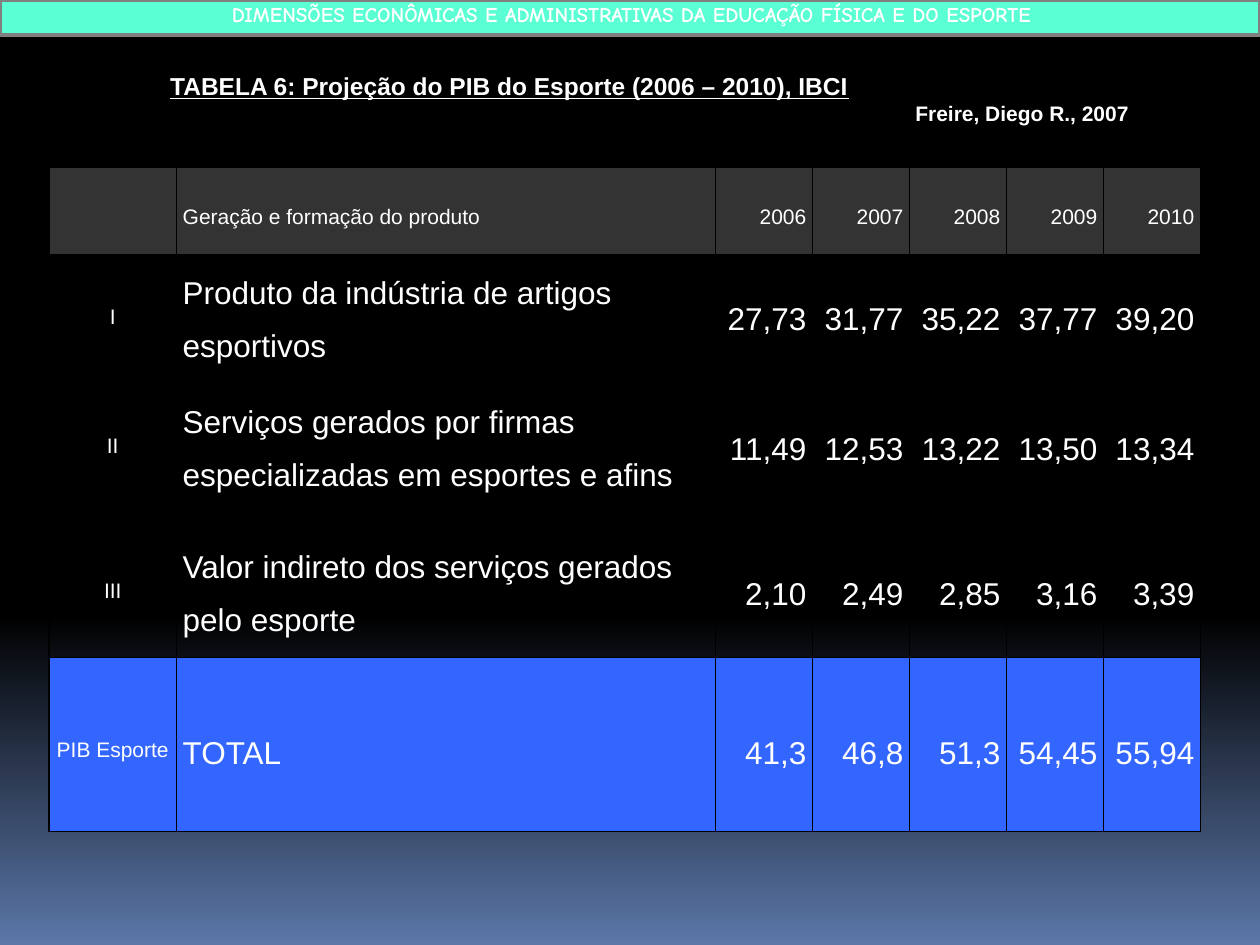
from copy import deepcopy

from lxml import etree
from pptx import Presentation
from pptx.dml.color import RGBColor
from pptx.enum.shapes import MSO_SHAPE
from pptx.enum.text import MSO_ANCHOR, MSO_AUTO_SIZE, PP_ALIGN
from pptx.oxml.ns import qn
from pptx.util import Inches, Pt

LEFT, CENTER, RIGHT, JUSTIFY = PP_ALIGN.LEFT, PP_ALIGN.CENTER, PP_ALIGN.RIGHT, PP_ALIGN.JUSTIFY
MIDDLE = MSO_ANCHOR.MIDDLE
GROW = MSO_AUTO_SIZE.SHAPE_TO_FIT_TEXT
RECTANGLE = MSO_SHAPE.RECTANGLE

WHITE = RGBColor(0xFF, 0xFF, 0xFF)
BLACK = RGBColor(0x00, 0x00, 0x00)
STEEL = RGBColor(0x5B, 0x77, 0xA8)
CHARCOAL = RGBColor(0x33, 0x33, 0x33)
BLUE = RGBColor(0x33, 0x66, 0xFF)
MINT = RGBColor(0x5B, 0xFF, 0xD4)
GRAY = RGBColor(0x80, 0x80, 0x80)

BACKGROUND_STOPS = [(0, BLACK), (0.65, BLACK), (1, STEEL)]
COLUMN_WIDTHS = [1.01, 4.28] + [0.77] * 5
ROW_HEIGHTS = [0.69, 0.69, 1.15, 1.15, 1.38]
ROW_FILLS = {0: CHARCOAL, 4: BLUE}
ROWS = [
    ["", "Geração e formação do produto", "2006", "2007", "2008", "2009", "2010"],
    ["I", "Produto da indústria de artigos esportivos",
     "27,73", "31,77", "35,22", "37,77", "39,20"],
    ["II", "Serviços gerados por firmas especializadas em esportes e afins",
     "11,49", "12,53", "13,22", "13,50", "13,34"],
    ["III", "Valor indireto dos serviços gerados pelo esporte",
     "2,10", "2,49", "2,85", "3,16", "3,39"],
    ["PIB Esporte", "TOTAL", "41,3", "46,8", "51,3", "54,45", "55,94"],
]


class SlideBuilder:
    body_font = "Arial"
    header_font = "Comic Neue"

    def __init__(self, deck):
        self.page = deck.slides.add_slide(deck.slide_layouts[5])

    def background(self, stops):
        fill = self.page.background.fill
        fill.gradient()
        fill.gradient_angle = 270
        stop_list = self.page.element.find(".//" + qn("a:gsLst"))
        stop_list.append(deepcopy(stop_list[-1]))
        for stop, (position, color) in zip(fill.gradient_stops, stops):
            stop.position = position
            stop.color.rgb = color

    def span(self, para, text, size, align, font=body_font, bold=False, underline=False):
        para.alignment = align
        span = para.add_run()
        span.text = text
        span.font.name = font
        span.font.size = Pt(size)
        span.font.bold = bold
        span.font.underline = underline
        span.font.color.rgb = WHITE

    def title(self, caption, author):
        box = self.page.shapes.title
        box.left, box.top = Inches(1.25), Inches(0.51)
        box.width, box.height = Inches(7.81), Inches(0.54)
        frame = box.text_frame
        frame.word_wrap = True
        frame.auto_size = GROW
        frame.vertical_anchor = MIDDLE
        self.span(frame.paragraphs[0], caption, 14, JUSTIFY, bold=True, underline=True)
        self.span(frame.add_paragraph(), author, 12, RIGHT, bold=True)

    def border(self, cell):
        properties = cell._tc.get_or_add_tcPr()
        for side in ("a:lnL", "a:lnR", "a:lnT", "a:lnB"):
            line = etree.SubElement(properties, qn(side), w=str(Pt(1)))
            solid = etree.SubElement(line, qn("a:solidFill"))
            etree.SubElement(solid, qn("a:srgbClr"), val=str(BLACK))

    def cell(self, cell, text, size, align, color):
        self.border(cell)
        if color is None:
            cell.fill.background()
        else:
            cell.fill.solid()
            cell.fill.fore_color.rgb = color
        cell.vertical_anchor = MIDDLE
        cell.margin_left = cell.margin_right = Inches(0.05)
        cell.margin_top = cell.margin_bottom = 0
        if text:
            para = cell.text_frame.paragraphs[0]
            para.line_spacing = 1.5
            self.span(para, text, size, align)

    def table(self, rows):
        holder = self.page.shapes.add_table(
            len(rows), len(COLUMN_WIDTHS),
            Inches(0.39), Inches(1.33), Inches(9.14), Inches(5.29))
        table = holder.table
        table.first_row = table.horz_banding = False
        for column, width in zip(table.columns, COLUMN_WIDTHS):
            column.width = Inches(width)
        for row, height in zip(table.rows, ROW_HEIGHTS):
            row.height = Inches(height)
        holder.height = Inches(5.29)
        aligns = [CENTER, LEFT] + [RIGHT] * 5
        for r, texts in enumerate(rows):
            for c, (text, align) in enumerate(zip(texts, aligns)):
                size = 12 if r == 0 or c == 0 else 18
                self.cell(table.cell(r, c), text, size, align, ROW_FILLS.get(r))

    def header(self, text):
        group = self.page.shapes.add_group_shape()
        bar = group.shapes.add_shape(RECTANGLE, 0, 0, Inches(10), Inches(0.28))
        bar.shadow.inherit = False
        bar.fill.solid()
        bar.fill.fore_color.rgb = MINT
        bar.line.color.rgb = GRAY
        bar.line.width = Pt(2)
        box = group.shapes.add_textbox(Inches(0.35), 0, Inches(9.33), Inches(0.26))
        frame = box.text_frame
        frame.word_wrap = True
        frame.auto_size = GROW
        para = frame.paragraphs[0]
        para.line_spacing = 0.8
        self.span(para, text, 12, CENTER, font=self.header_font, bold=True)


def main():
    deck = Presentation()
    deck.slide_width, deck.slide_height = Inches(10), Inches(7.5)
    builder = SlideBuilder(deck)
    builder.background(BACKGROUND_STOPS)
    builder.title("TABELA 6: Projeção do PIB do Esporte (2006 – 2010), IBCI",
                  "Freire, Diego R., 2007")
    builder.table(ROWS)
    builder.header("DIMENSÕES ECONÔMICAS E ADMINISTRATIVAS DA EDUCAÇÃO FÍSICA E DO ESPORTE")
    deck.save("out.pptx")


if __name__ == "__main__":
    main()
